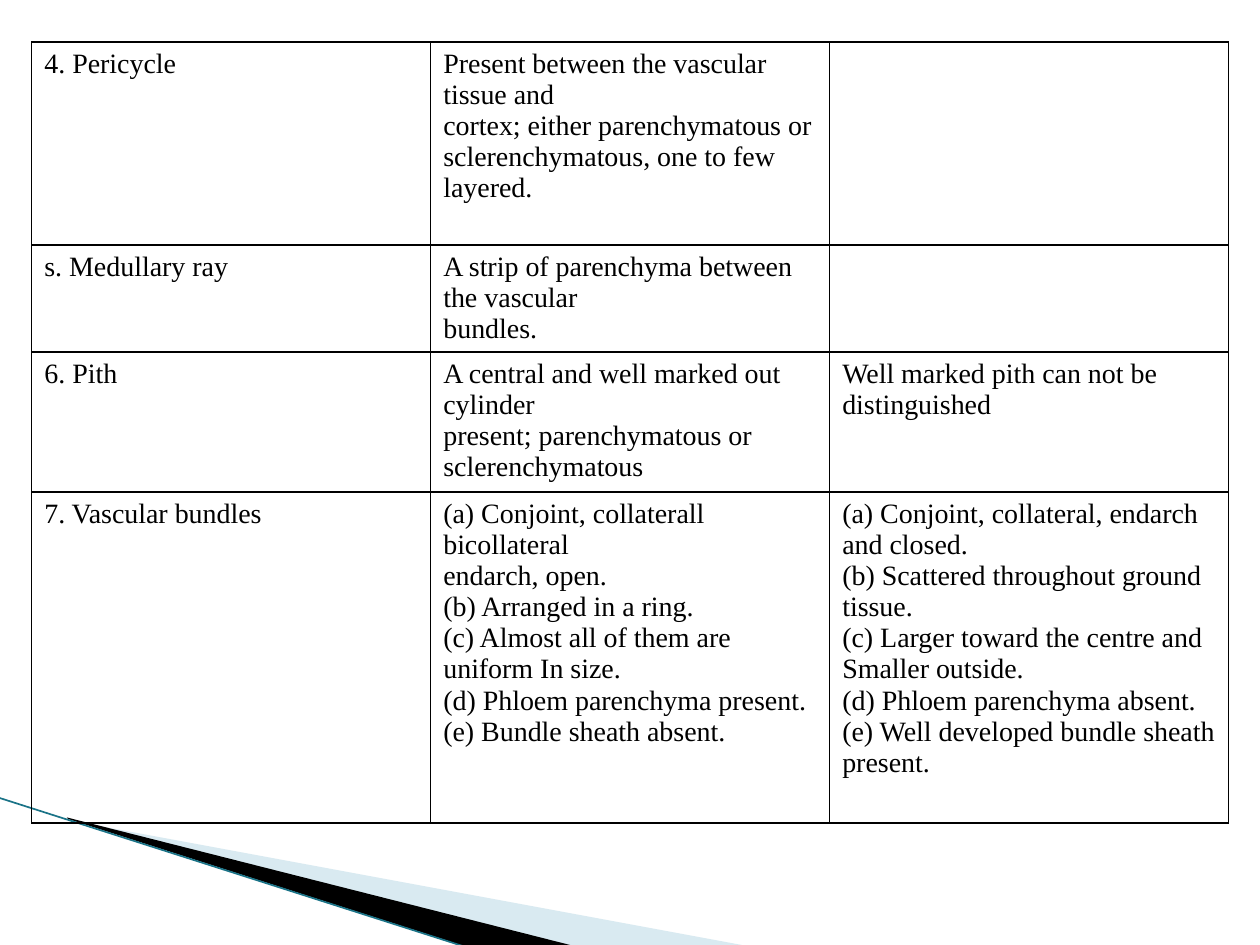
"""Build a slide with a table comparing the tissues of dicot and monocot stems."""
from lxml import etree
from pptx import Presentation
from pptx.dml.color import RGBColor
from pptx.enum.shapes import MSO_CONNECTOR
from pptx.oxml import parse_xml
from pptx.oxml.ns import nsdecls, qn
from pptx.util import Cm, Pt


def color(hex_value):
    """Turn a hex string into a colour."""
    return RGBColor.from_string(hex_value)


prs = Presentation()
prs.slide_width, prs.slide_height = Cm(25.4), Cm(19.05)
slide = prs.slides.add_slide(prs.slide_layouts[6])

wedges = [
    ("A0CBDC", 40, (1.98, 13.89, 10.57, 4.01),
     [(1.4, 16.54), (15.11, 19.08), (11.58, 19.08), (1.4, 16.51)]),
    ("000000", 100, (-0.15, 16.08, 10.57, 2.34),
     [(1.35, 16.48), (11.61, 19.08), (9.45, 19.1), (1.37, 16.51)]),
]
for fill_color, opacity, bounds, corners in wedges:
    points = [(Cm(x), Cm(y)) for x, y in corners]
    builder = slide.shapes.build_freeform(*points[0])
    builder.add_line_segments(points[1:], close=True)
    wedge = builder.convert_to_shape()
    left, top, width, height = [Cm(value) for value in bounds]
    shift_x, shift_y = wedge.left - left, wedge.top - top
    wedge.left, wedge.top, wedge.width, wedge.height = left, top, width, height
    outline = next(wedge._element.iter(qn("a:path")))
    outline.set("w", str(width))
    outline.set("h", str(height))
    for point in outline.iter(qn("a:pt")):
        point.set("x", str(int(point.get("x")) + shift_x))
        point.set("y", str(int(point.get("y")) + shift_y))
    wedge.shadow.inherit = False
    wedge.line.fill.background()
    wedge.fill.solid()
    wedge.fill.fore_color.rgb = color(fill_color)
    if opacity < 100:
        tint = wedge._element.spPr.find(qn("a:solidFill"))[0]
        etree.SubElement(tint, qn("a:alpha"), val=str(opacity * 1000))

edge = slide.shapes.add_connector(
    MSO_CONNECTOR.STRAIGHT, Cm(-0.03), Cm(16.08), Cm(9.42), Cm(19.1))
edge.line.color.rgb = color("1A7387")
edge.line.width = Pt(0.95)
etree.SubElement(edge._element.spPr, qn("a:effectLst"))

tissues = [
    (4.09, ["4. Pericycle"],
     ["Present between the vascular tissue and",
      "cortex; either parenchymatous or",
      "sclerenchymatous, one to few layered."],
     []),
    (2.16, ["s. Medullary ray"],
     ["A strip of parenchyma between the vascular", "bundles."],
     []),
    (2.82, ["6. Pith"],
     ["A central and well marked out cylinder",
      "present; parenchymatous or",
      "sclerenchymatous"],
     ["Well marked pith can not be distinguished"]),
    (6.67, ["7. Vascular bundles"],
     ["(a) Conjoint, collaterall bicollateral",
      "endarch, open.",
      "(b) Arranged in a ring.",
      "(c) Almost all of them are uniform In size.",
      "(d) Phloem parenchyma present.",
      "(e) Bundle sheath absent."],
     ["(a) Conjoint, collateral, endarch and closed.",
      "(b) Scattered throughout ground tissue.",
      "(c) Larger toward the centre and Smaller outside.",
      "(d) Phloem parenchyma absent.",
      "(e) Well developed bundle sheath present."]),
]
comparison = slide.shapes.add_table(
    len(tissues), 3, Cm(0.64), Cm(0.85), Cm(24.13), Cm(15.74)).table
comparison.first_row = comparison.horz_banding = False
for column in comparison.columns:
    column.width = Cm(24.13 / 3)

text_format = {"name": "Times New Roman", "size": Pt(16)}
for row_index, (height, *entries) in enumerate(tissues):
    comparison.rows[row_index].height = Cm(height)
    for column_index, statements in enumerate(entries):
        cell = comparison.cell(row_index, column_index)
        frame = cell.text_frame
        for index, statement in enumerate(statements):
            paragraph = frame.add_paragraph() if index else frame.paragraphs[0]
            run = paragraph.add_run()
            run.text = statement
            run.font.color.rgb = color("000000")
            for attribute, value in text_format.items():
                setattr(run.font, attribute, value)
        cell_properties = cell._tc.get_or_add_tcPr()
        for side in ("lnL", "lnR", "lnT", "lnB"):
            cell_properties.append(parse_xml(
                f'<a:{side} {nsdecls("a")} w="12700"><a:solidFill>'
                f'<a:srgbClr val="000000"/></a:solidFill></a:{side}>'))
        cell.fill.background()

prs.save("out.pptx")
